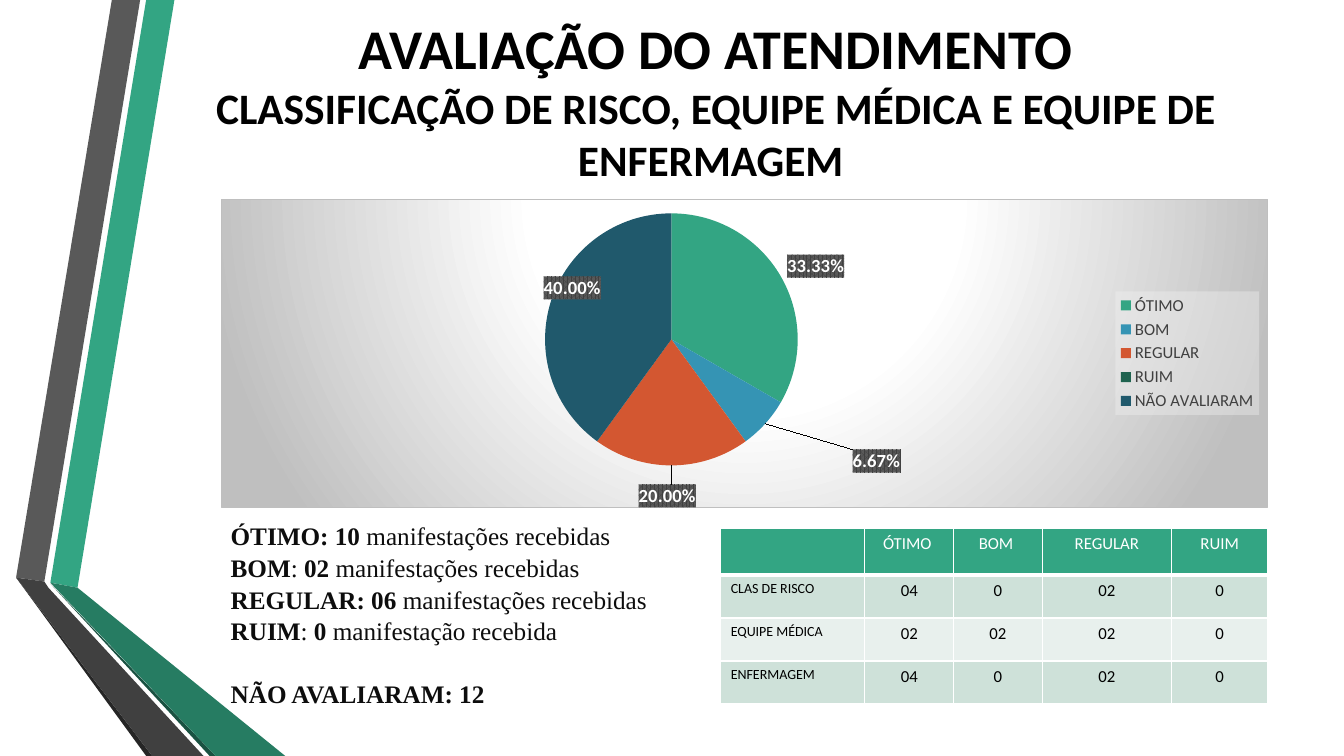
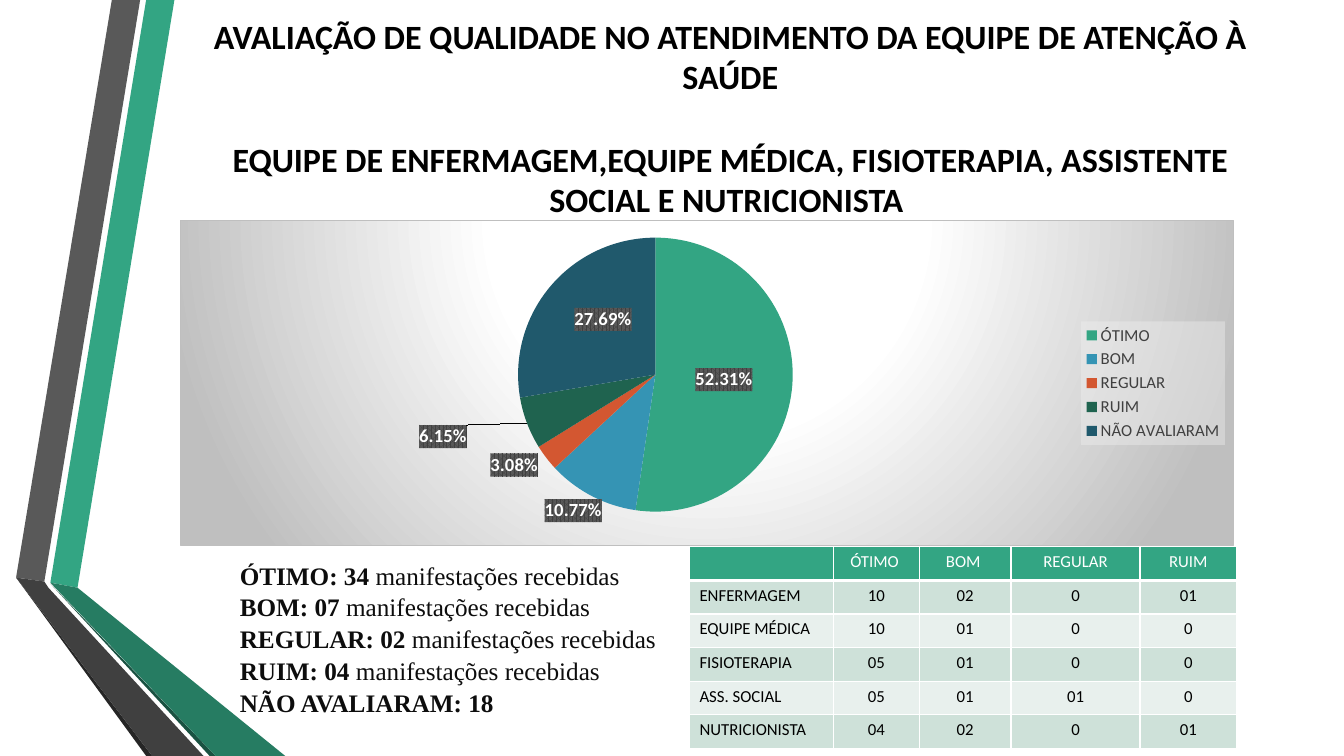
from copy import deepcopy
from dataclasses import dataclass

from lxml.etree import SubElement
from pptx import Presentation
from pptx.chart.data import CategoryChartData
from pptx.dml.color import RGBColor
from pptx.enum.chart import XL_CHART_TYPE, XL_LABEL_POSITION, XL_LEGEND_POSITION
from pptx.enum.text import MSO_ANCHOR, PP_ALIGN
from pptx.oxml import parse_xml
from pptx.oxml.ns import nsdecls, qn
from pptx.util import Pt


@dataclass(frozen=True)
class Theme:
    """Colours, fonts and type sizes of the deck."""
    sans: str = "Calibri"
    serif: str = "Times New Roman"
    black: str = "000000"
    white: str = "FFFFFF"
    ink: str = "0D0D0D"
    coal: str = "404040"
    gray: str = "595959"
    edge: str = "BFBFBF"
    mist: str = "F2F2F2"
    green: str = "33A583"
    bands: tuple = ("CEE1D9", "E8F0ED")
    pie: tuple = ("33A583", "3594B4", "D35731", "1F634F", "20596C")
    list_size: float = 18
    label_size: float = 13.3
    cell_size: float = 12
    chart_size: float = 10


T = Theme()
GRADES = ("ÓTIMO", "BOM", "REGULAR", "RUIM", "NÃO AVALIARAM")
HEADS = ("", "ÓTIMO ", "BOM ", "REGULAR", "RUIM")
MANY = "manifestações recebidas"
STRIPES = (
    (T.green, ((36, 416.2), (55.4, 419.8), (124.6, 0), (104.4, 0))),
    (T.gray, ((100.1, 0), (79.9, 0), (11.5, 412.6), (31.7, 415.4))),
    ("262626", ((11.5, 412.6), (104.4, 540), (108.7, 540))),
    ("1A5242", ((36, 416.9), (149.8, 540), (154.1, 540))),
    ("267C62", ((36, 416.2), (154.1, 540), (203.8, 540), (55.4, 419.8))),
    (T.coal, ((11.5, 412.6), (108.7, 540), (145.4, 540), (34.6, 419.8), (31.7, 415.4))),
)


def style(font, size, color, bold=False, name=T.sans):
    """Set face, size, weight and colour of a font."""
    font.name, font.size, font.bold = name, Pt(size), bold
    font.color.rgb = RGBColor.from_string(color)


def paint(fill, color):
    """Fill with one solid colour."""
    fill.solid()
    fill.fore_color.rgb = RGBColor.from_string(color)


def make(tag, body):
    """Build an XML element from its tag and inner markup."""
    return parse_xml(f"<{tag} {nsdecls('c', 'a')}>{body}</{tag}>")


def tint(color, alpha=100):
    """Give the markup of a colour with its opacity in percent."""
    return f'<a:srgbClr val="{color}"><a:alpha val="{alpha * 1000}"/></a:srgbClr>'


def place(**parts):
    """Build a manual chart layout from its parts."""
    body = "".join(f'<c:{key} val="{val}"/>' for key, val in parts.items())
    return make("c:layout", f"<c:manualLayout>{body}</c:manualLayout>")


def add_bands(prs, slide):
    """Draw the side bands and move them to the master."""
    tree = prs.slide_master.shapes.element
    for num, (color, points) in enumerate(STRIPES, 100):
        spots = [(Pt(x), Pt(y)) for x, y in points]
        build = slide.shapes.build_freeform(*spots[0])
        build.add_line_segments(spots[1:], close=True)
        band = build.convert_to_shape()
        band.shadow.inherit = False
        paint(band.fill, color)
        band.line.fill.background()
        band.element.xpath("./p:nvSpPr/p:cNvPr")[0].set("id", str(num))
        tree.append(band.element)


def add_box(slide, box):
    """Add a wrapping text box and return its frame."""
    frame = slide.shapes.add_textbox(*map(Pt, box)).text_frame
    frame.word_wrap = True
    return frame


def add_title(slide, box, lines, gap=0):
    """Add a centred bold title of lines with their sizes."""
    frame = add_box(slide, box)
    frame.vertical_anchor = MSO_ANCHOR.MIDDLE
    frame.text = "\n".join(text for text, size in lines)
    for para, (text, size) in zip(frame.paragraphs, lines):
        para.alignment = PP_ALIGN.CENTER
        style(para.runs[0].font, size, T.black, True)
    frame.paragraphs[-1].space_before = Pt(gap)


def add_list(slide, box, lines, gap=0):
    """Add lines whose runs go from bold to plain in turn."""
    frame = add_box(slide, box)
    for row, texts in enumerate(lines):
        para = frame.add_paragraph() if row else frame.paragraphs[0]
        para.line_spacing = 1.05
        for col, text in enumerate(texts):
            run = para.add_run()
            run.text = text
            style(run.font, T.list_size, T.ink, col % 2 == 0, T.serif)
    para.space_before = Pt(gap)


def edge_cell(cell, low):
    """Draw white cell borders with a given bottom width."""
    props = cell._tc.get_or_add_tcPr()
    for side, width in (("L", 1), ("R", 1), ("T", 1), ("B", low)):
        line = make(f"a:ln{side}", f"<a:solidFill>{tint(T.white)}</a:solidFill>")
        line.set("w", str(Pt(width)))
        props.append(line)


def add_grid(slide, box, cols, rows, head, side):
    """Add the score table with a green head and banded rows."""
    data = (HEADS, *rows)
    grid = slide.shapes.add_table(len(data), len(cols), *map(Pt, box)).table
    for col, width in zip(grid.columns, cols):
        col.width = Pt(width)
    for row, line in enumerate(data):
        grid.rows[row].height = Pt(head if row == 0 else (box[3] - head) / len(rows))
        for col, text in enumerate(line):
            cell = grid.cell(row, col)
            edge_cell(cell, 1 if row else 3)
            paint(cell.fill, T.bands[(row - 1) % 2] if row else T.green)
            cell.text_frame.text = text
            para = cell.text_frame.paragraphs[0]
            para.alignment = PP_ALIGN.CENTER if col else PP_ALIGN.LEFT
            size = T.cell_size if col else side
            for run in para.runs:
                style(run.font, size, T.black if row else T.white)
            if not text:
                SubElement(para._p, qn("a:endParaRPr"), sz=str(size * 100))


def set_labels(chart, size, moves):
    """Style the labels, shift some by points and drop those set to None."""
    labels = chart.plots[0].series[0].data_labels
    labels.number_format, labels.number_format_is_linked = "0.00%", False
    labels.show_percentage, labels.show_value = True, False
    labels.position = XL_LABEL_POSITION.CENTER
    style(labels.font, T.label_size, T.white, True)
    root = chart.element.xpath(".//c:ser/c:dLbls")[0]
    root.xpath("c:txPr")[0].addprevious(make(
        "c:spPr", '<a:pattFill prst="pct75">'
        f"<a:fgClr>{tint(T.coal)}</a:fgClr><a:bgClr>{tint(T.gray)}</a:bgClr></a:pattFill>"))
    shared = [part for part in root if part.tag != qn("c:showLeaderLines")]
    for spot, (point, move) in enumerate(moves.items()):
        label = make("c:dLbl", f'<c:idx val="{point}"/>')
        if move is None:
            label.append(make("c:delete", ""))
            label[-1].set("val", "1")
        else:
            label.append(place(x=round(move[0] / size[0], 4), y=round(move[1] / size[1], 4)))
            label.extend([deepcopy(part) for part in shared])
        root.insert(spot, label)


def add_pie(slide, box, values, disc, moves):
    """Add a pie whose disc is given as left, top and size in its box."""
    data = CategoryChartData()
    data.categories = GRADES
    data.add_series("Series 1", values)
    chart = slide.shapes.add_chart(XL_CHART_TYPE.PIE, *map(Pt, box), data).chart
    chart.has_title = False
    style(chart.font, T.chart_size, T.black)
    plot = chart.plots[0]
    plot.vary_by_categories = True
    for num, color in enumerate(T.pie):
        paint(plot.series[0].points[num].format.fill, color)
    chart.has_legend = True
    chart.legend.position = XL_LEGEND_POSITION.RIGHT
    chart.legend.include_in_layout = False
    style(chart.legend.font, T.cell_size, T.coal)
    chart.element.xpath(".//c:legend/c:txPr")[0].addprevious(make(
        "c:spPr", f"<a:solidFill>{tint(T.mist, 39)}</a:solidFill>"))
    stops = "".join(f'<a:gs pos="{pos}000">{tint(color)}</a:gs>' for pos, color in
                    ((0, T.white), (39, T.white), (100, T.edge)))
    chart.element.xpath("c:chart")[0].addnext(make(
        "c:spPr", f'<a:gradFill><a:gsLst>{stops}</a:gsLst><a:path path="circle">'
        '<a:fillToRect l="50000" t="-80000" r="50000" b="180000"/></a:path></a:gradFill>'
        f'<a:ln w="{Pt(0.75)}"><a:solidFill>{tint(T.edge)}</a:solidFill></a:ln>'))
    size = box[2:]
    area = chart.element.xpath(".//c:plotArea")[0]
    for old in area.xpath("c:layout"):
        area.remove(old)
    area.insert(0, place(
        layoutTarget="inner", xMode="edge", yMode="edge",
        x=round(disc[0] / size[0], 4), y=round(disc[1] / size[1], 4),
        w=round(disc[2] / size[0], 4), h=round(disc[2] / size[1], 4)))
    set_labels(chart, size, moves)


def add_care(slide):
    """Fill the slide on risk, doctors and nurses."""
    add_title(slide, (116.6, 0, 789.1, 141.8), (
        ("AVALIAÇÃO DO ATENDIMENTO", 40),
        ("CLASSIFICAÇÃO DE RISCO, EQUIPE MÉDICA E EQUIPE DE ENFERMAGEM ", 31)))
    add_pie(slide, (157.7, 141.8, 748, 221), (33.33, 6.67, 20, 0, 40), (231.5, 10.3, 180.7),
            {0: (64, -30), 1: (113, 57), 2: (-3, 67), 3: None, 4: (-28, -23)})
    add_list(slide, (157.7, 367.2, 331.2, 159.8), (
        ("ÓTIMO: 10 ", MANY), ("BOM", ": ", "02 ", MANY), ("REGULAR: 06 ", MANY),
        ("RUIM", ": ", "0 ", "manifestação recebida"), ("NÃO AVALIARAM: 12",)), 21.7)
    add_grid(slide, (514.8, 377.3, 391, 125.6), (103, 63.4, 63.4, 92.2, 69), (
        ("CLAS DE RISCO", "04", "0", "02", "0"),
        ("EQUIPE MÉDICA", "02", "02", "02", "0"),
        ("ENFERMAGEM", "04", "0", "02", "0")), 33.5, 10)


def add_team(slide):
    """Fill the slide on the whole health care team."""
    add_title(slide, (128.9, 11.5, 785.5, 144.7), (
        ("AVALIAÇÃO DE QUALIDADE NO ATENDIMENTO DA EQUIPE DE ATENÇÃO À SAÚDE", 24.3),
        ("EQUIPE DE ENFERMAGEM,EQUIPE MÉDICA, FISIOTERAPIA, "
         "ASSISTENTE SOCIAL E NUTRICIONISTA ", 24.3)), 29.5)
    add_pie(slide, (128.9, 157, 752.4, 233.3), (52.31, 10.77, 3.08, 6.15, 27.69),
            (241.1, 12.4, 196.4), {1: (-36, 54), 2: (-62, 35), 3: (-106, 27), 4: (0, -8)})
    add_list(slide, (164.2, 395.3, 328.3, 116.6), (
        ("ÓTIMO: 34 ", MANY), ("BOM: 07 ", MANY), ("REGULAR: 02 ", MANY),
        ("RUIM: 04 ", MANY), ("NÃO AVALIARAM: 18",)))
    add_grid(slide, (492.5, 390.2, 391, 144.4), (103, 61.2, 65.5, 92.2, 69), (
        ("ENFERMAGEM", "10", "02", "0", "01"),
        ("EQUIPE MÉDICA", "10", "01", "0", "0"),
        ("FISIOTERAPIA", "05", "01", "0", "0"),
        ("ASS. SOCIAL", "05", "01", "01", "0"),
        ("NUTRICIONISTA", "04", "02", "0", "01")), 24.4, 12)


def main():
    """Build the deck and save it."""
    prs = Presentation()
    prs.slide_width, prs.slide_height = Pt(960), Pt(540)
    care, team = (prs.slides.add_slide(prs.slide_layouts[6]) for _ in range(2))
    add_bands(prs, care)
    add_care(care)
    add_team(team)
    prs.save("out.pptx")


if __name__ == "__main__":
    main()
